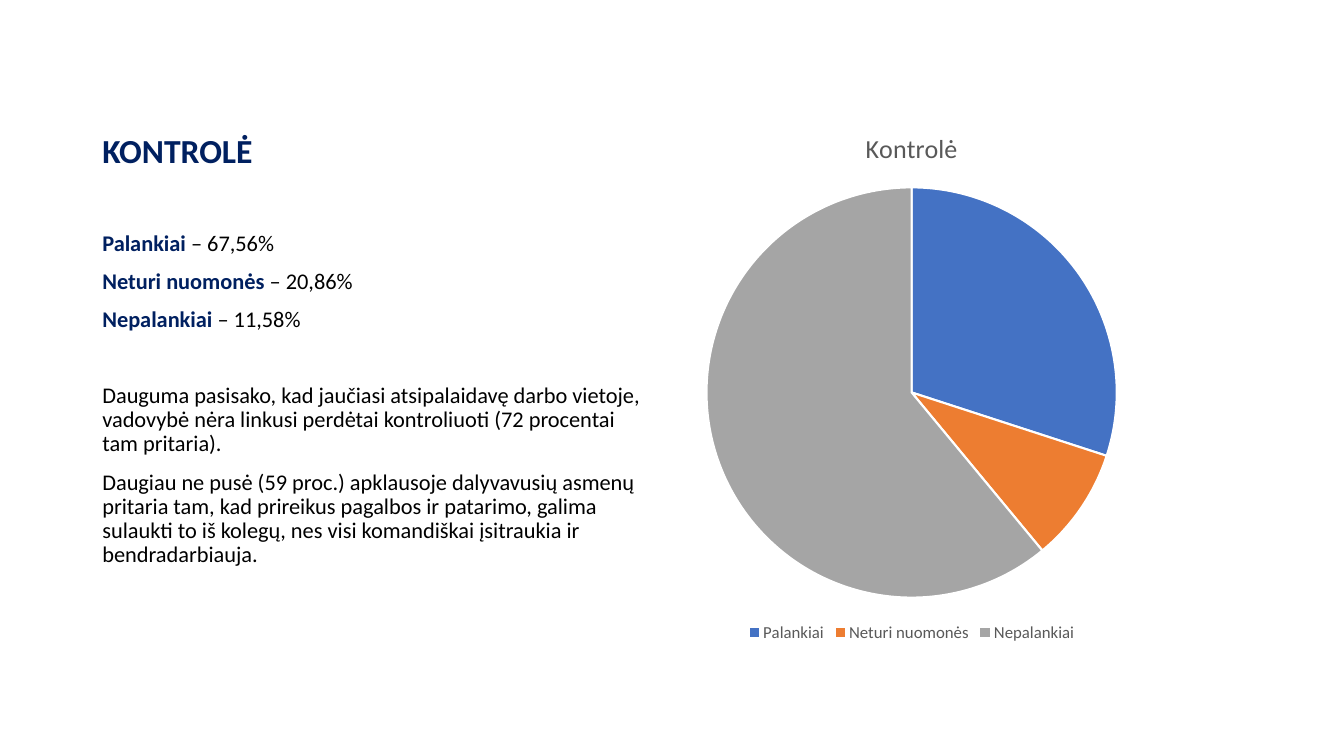
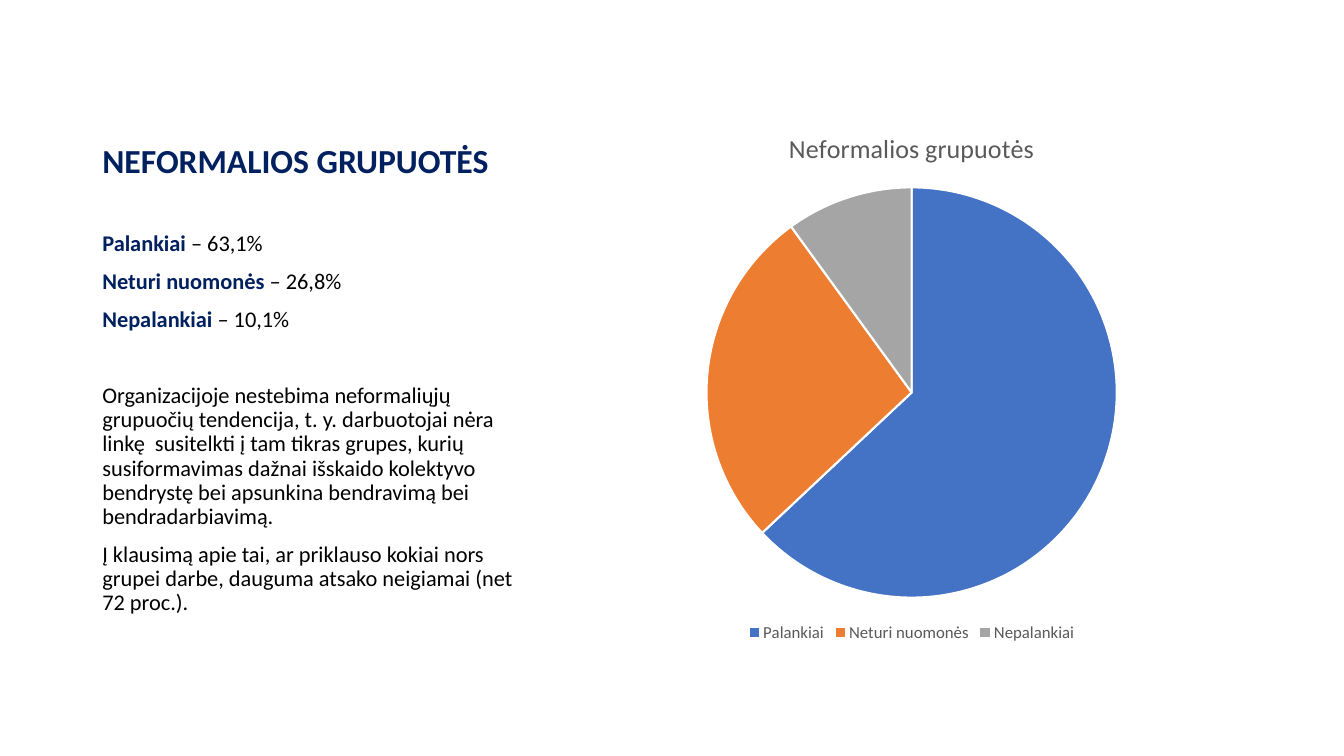
from pptx import Presentation
from pptx.chart.data import CategoryChartData
from pptx.dml.color import RGBColor
from pptx.enum import chart as ch, text as tx
from pptx.util import Cm, Pt

FONT = "Calibri"
NAVY = RGBColor(0x00, 0x20, 0x60)
BLACK = RGBColor(0x00, 0x00, 0x00)
WHITE = RGBColor(0xFF, 0xFF, 0xFF)
GREY = RGBColor(0x59, 0x59, 0x59)
SLICE_COLOURS = (
    RGBColor(0x44, 0x72, 0xC4),
    RGBColor(0xED, 0x7D, 0x31),
    RGBColor(0xA5, 0xA5, 0xA5),
)
ANSWERS = ("Palankiai", "Neturi nuomonės", "Nepalankiai")

LEFT = Cm(2.33)
TITLE_TOP, TITLE_WIDTH = Cm(1.27), Cm(10.92)
BODY_TOP, BODY_HEIGHT = Cm(5.72), Cm(10.58)
CHART_BOX = Cm(14.4), Cm(2.75), Cm(17.15), Cm(13.55)
PARAGRAPH_GAP, SECTION_GAP = 10, 37

TOPICS = (
    dict(
        topic="Kontrolė",
        title_height=Cm(3.15),
        body_width=Cm(14.18),
        shares=("67,56%", "20,86%", "11,58%"),
        slices=(30, 9, 61),
        comments=(
            "Dauguma pasisako, kad jaučiasi atsipalaidavę darbo vietoje, vadovybė nėra "
            "linkusi perdėtai kontroliuoti (72 procentai tam pritaria).",
            "Daugiau ne pusė (59 proc.) apklausoje dalyvavusių asmenų pritaria tam, kad "
            "prireikus pagalbos ir patarimo, galima sulaukti to iš kolegų, nes visi "
            "komandiškai įsitraukia ir bendradarbiauja.",
        ),
    ),
    dict(
        topic="Neformalios grupuotės",
        title_height=Cm(3.4),
        body_width=Cm(10.92),
        shares=("63,1%", "26,8%", "10,1%"),
        slices=(63, 27, 10),
        comments=(
            "Organizacijoje nestebima neformaliųjų grupuočių tendencija, t. y. "
            "darbuotojai nėra linkę  susitelkti į tam tikras grupes, kurių "
            "susiformavimas dažnai išskaido kolektyvo bendrystę bei apsunkina "
            "bendravimą bei bendradarbiavimą.",
            "Į klausimą apie tai, ar priklauso kokiai nors grupei darbe, dauguma "
            "atsako neigiamai (net 72 proc.).",
        ),
    ),
)


def style_font(font, size, colour, bold=False):
    font.name = FONT
    font.size = Pt(size)
    font.bold = bold
    font.color.rgb = colour


def add_text(paragraph, text, size=16, colour=BLACK, bold=False, before=None):
    """Append one formatted run; before sets the paragraph's space above."""
    run = paragraph.add_run()
    run.text = text
    style_font(run.font, size, colour, bold)
    paragraph.line_spacing = 0.9
    if before is not None:
        paragraph.space_before = Pt(before)


def add_frame(slide, left, top, width, height, anchor=tx.MSO_ANCHOR.TOP):
    frame = slide.shapes.add_textbox(left, top, width, height).text_frame
    frame.word_wrap = True
    frame.vertical_anchor = anchor
    return frame


def add_title(slide, topic, height):
    frame = add_frame(slide, LEFT, TITLE_TOP, TITLE_WIDTH, height, tx.MSO_ANCHOR.BOTTOM)
    add_text(frame.paragraphs[0], topic.upper(), size=24, colour=NAVY, bold=True)


def add_body(slide, width, shares, comments):
    frame = add_frame(slide, LEFT, BODY_TOP, width, BODY_HEIGHT)
    paragraph = frame.paragraphs[0]
    for answer, share in zip(ANSWERS, shares):
        add_text(paragraph, answer, colour=NAVY, bold=True, before=PARAGRAPH_GAP)
        add_text(paragraph, f" – {share}")
        paragraph = frame.add_paragraph()
    add_text(paragraph, comments[0], before=SECTION_GAP)
    for comment in comments[1:]:
        add_text(frame.add_paragraph(), comment, before=PARAGRAPH_GAP)


def add_pie(slide, topic, slices):
    data = CategoryChartData()
    data.categories = ANSWERS
    data.add_series(topic, slices)
    chart = slide.shapes.add_chart(ch.XL_CHART_TYPE.PIE, *CHART_BOX, data).chart
    style_font(chart.font, 10, BLACK)

    chart.has_title = True
    heading = chart.chart_title
    add_text(heading.text_frame.paragraphs[0], topic, size=18.6, colour=GREY)
    heading.include_in_layout = False

    chart.has_legend = True
    chart.legend.position = ch.XL_LEGEND_POSITION.BOTTOM
    chart.legend.include_in_layout = False
    style_font(chart.legend.font, 12, GREY)

    pie = chart.plots[0]
    pie.vary_by_categories = True
    for index, colour in enumerate(SLICE_COLOURS):
        slice_format = pie.series[0].points[index].format
        slice_format.fill.solid()
        slice_format.fill.fore_color.rgb = colour
        slice_format.line.color.rgb = WHITE
        slice_format.line.width = Pt(1.5)


def add_topic_slide(deck, topic, title_height, body_width, shares, slices, comments):
    slide = deck.slides.add_slide(deck.slide_layouts[6])
    add_title(slide, topic, title_height)
    add_pie(slide, topic, slices)
    add_body(slide, body_width, shares, comments)


def main():
    deck = Presentation()
    deck.slide_width, deck.slide_height = Cm(33.87), Cm(19.05)
    for content in TOPICS:
        add_topic_slide(deck, **content)
    deck.save("out.pptx")


if __name__ == "__main__":
    main()
